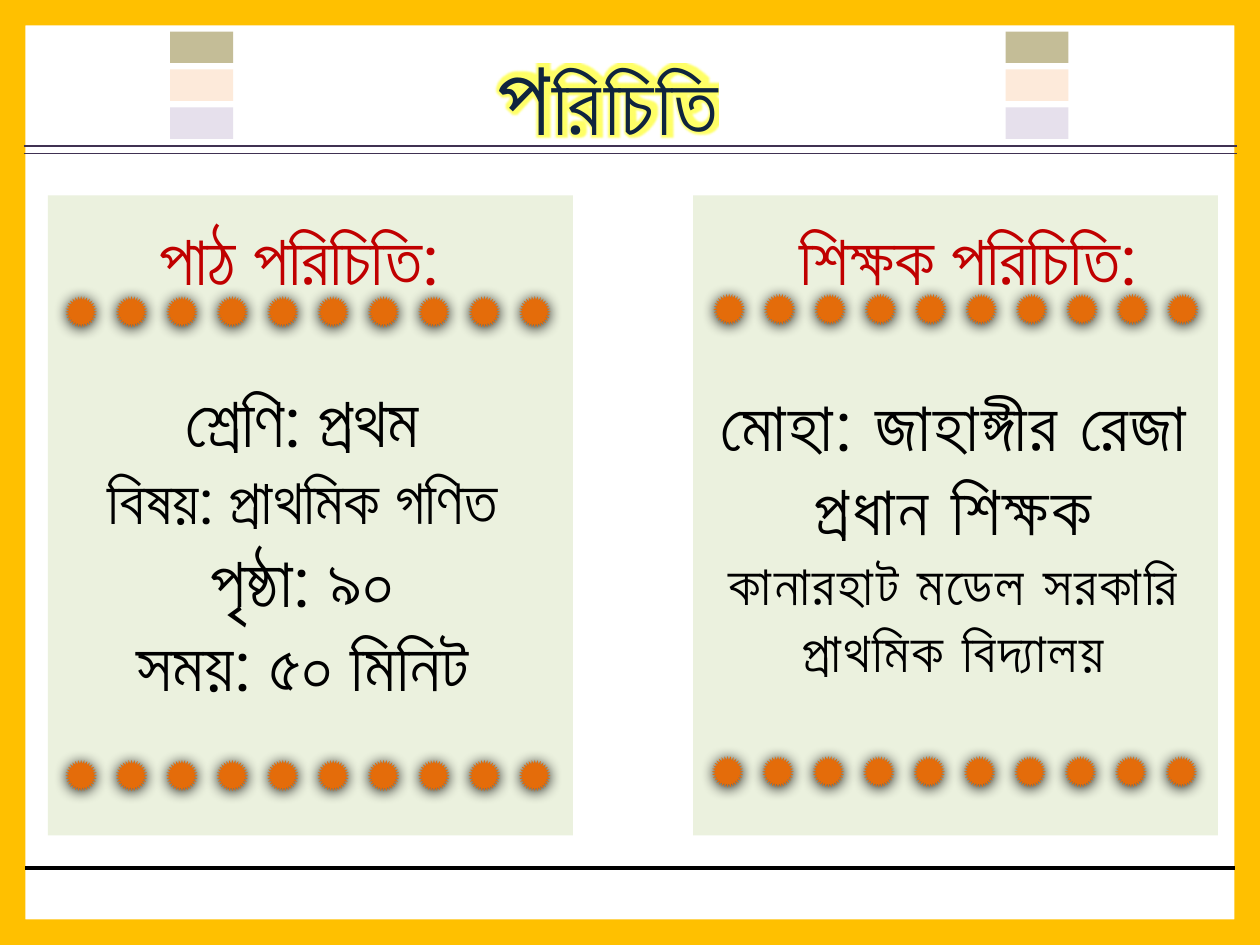
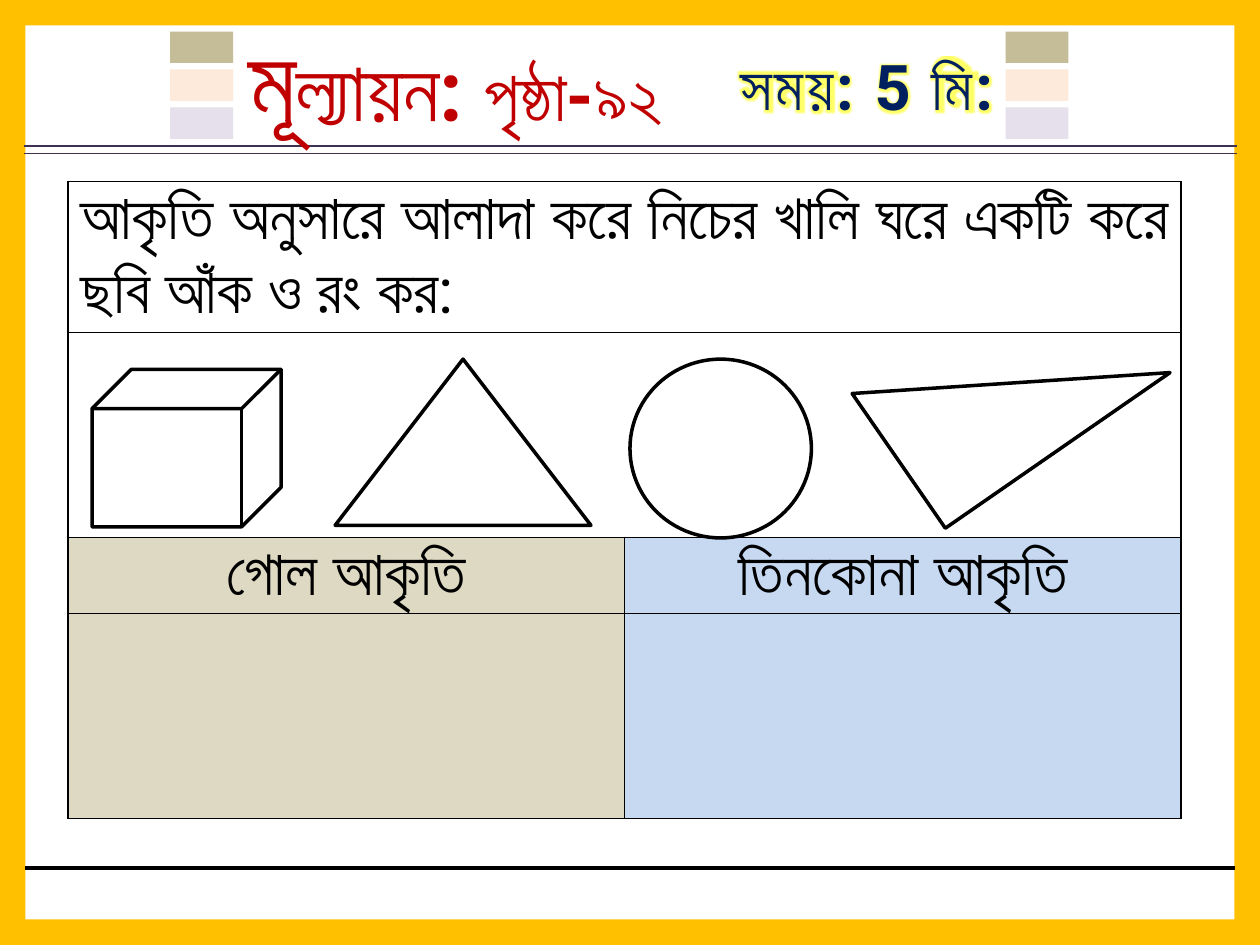
import pptx
import pptx.dml.color
import pptx.enum.shapes
import pptx.enum.text
import pptx.oxml
import pptx.oxml.ns
import pptx.util

RGB = pptx.dml.color.RGBColor
SHAPE = pptx.enum.shapes.MSO_SHAPE
ALIGN = pptx.enum.text.PP_ALIGN
FIT = pptx.enum.text.MSO_AUTO_SIZE

# Colours
GOLD = RGB(0xFF, 0xC0, 0x00)
BLACK = RGB(0x00, 0x00, 0x00)
WHITE = RGB(0xFF, 0xFF, 0xFF)
PLUM = RGB(0x40, 0x31, 0x52)
KHAKI = RGB(0xC4, 0xBD, 0x97)
PEACH = RGB(0xFD, 0xEA, 0xDA)
LILAC = RGB(0xE6, 0xE0, 0xEC)
SAGE = RGB(0xEB, 0xF1, 0xDE)
ORANGE = RGB(0xE4, 0x6C, 0x0A)
RED = RGB(0xC0, 0x00, 0x00)
NAVY = RGB(0x00, 0x20, 0x60)
INK = RGB(0x0F, 0x24, 0x3E)
SAND = RGB(0xDD, 0xD9, 0xC3)
SKY = RGB(0xC6, 0xD9, 0xF1)

FONT = "Roboto"
NS = 'xmlns:a="http://schemas.openxmlformats.org/drawingml/2006/main"'
GLOW = (f'<a:effectLst {NS}><a:glow rad="63500"><a:srgbClr val="FFFF00">'
        '<a:alpha val="60000"/></a:srgbClr></a:glow></a:effectLst>')
SHADE = (f'<a:outerShdw {NS} blurRad="107950" dist="12700" dir="5400000" rotWithShape="0">'
         '<a:srgbClr val="000000"/></a:outerShdw>')
EDGE = (f'<a:ln {NS} w="12700"><a:solidFill><a:srgbClr val="FFFFFF"/></a:solidFill>'
        '<a:prstDash val="sysDot"/></a:ln>')


def xml(text):
    return pptx.oxml.parse_xml(text)


def apply(item, **values):
    for name, value in values.items():
        setattr(item, name, value)


def points(*sizes):
    return [pptx.util.Pt(size) for size in sizes]


class Deck:
    def __init__(self):
        self.prs = pptx.Presentation()
        width, height = points(720, 540)
        apply(self.prs, slide_width=width, slide_height=height)
        self.layout = self.prs.slide_layouts[5]
        self.slide = None

    def page(self):
        self.slide = self.prs.slides.add_slide(self.layout)

    def shape(self, kind, box, fill=None, line=None, turn=0):
        item = self.slide.shapes.add_shape(kind, *points(*box))
        item.shadow.inherit = False
        item.rotation = turn
        if fill is None:
            item.fill.background()
        else:
            item.fill.solid()
            item.fill.fore_color.rgb = fill
        if line is None:
            item.line.fill.background()
        else:
            item.line.color.rgb = line
            item.line.width = pptx.util.Pt(2)
        return item

    def rule(self, left, right, top, color, width):
        kind = pptx.enum.shapes.MSO_CONNECTOR.STRAIGHT
        item = self.slide.shapes.add_connector(kind, *points(left, top, right, top))
        item.line.color.rgb = color
        item.line.width = pptx.util.Pt(width)
        item.element.spPr.append(xml(f"<a:effectLst {NS}/>"))
        return item

    def piece(self, para, text, size, color, bold=False, space=0, glow=False, edge=False):
        part = para.add_run()
        part.text = text
        part.font.color.rgb = color
        props = part.font._element
        if edge:
            props.insert(0, xml(EDGE))
        if glow:
            props.append(xml(GLOW))
        apply(part.font, name=FONT, size=pptx.util.Pt(size), bold=bold)
        props.append(xml(f'<a:cs {NS} typeface="{FONT}"/>'))
        if space:
            props.set("spc", str(round(space * 100)))

    def lines(self, frame, rows, align=ALIGN.CENTER, **style):
        """Each row is a list of (text, size) pieces."""
        for index, row in enumerate(rows):
            para = frame.add_paragraph() if index else frame.paragraphs[0]
            para.alignment = align
            for text, size in row:
                self.piece(para, text, size, **style)

    def text(self, box, rows, **style):
        item = self.slide.shapes.add_textbox(*points(*box))
        apply(item.text_frame, word_wrap=False, auto_size=FIT.SHAPE_TO_FIT_TEXT)
        self.lines(item.text_frame, rows, **style)

    def title(self, box, row, **style):
        item = self.slide.shapes.title
        left, top, width, height = points(*box)
        apply(item, left=left, top=top, width=width, height=height)
        apply(item.text_frame, word_wrap=False, auto_size=FIT.NONE,
              vertical_anchor=pptx.enum.text.MSO_ANCHOR.TOP)
        self.lines(item.text_frame, [row], bold=True, **style)

    def dots(self, left, top):
        for step in range(10):
            dot = self.shape(SHAPE.STAR_32_POINT, (left + 28.8 * step, top, 18, 18), ORANGE)
            dot.element.spPr.find(pptx.oxml.ns.qn("a:effectLst")).append(xml(SHADE))

    def card(self, left, head, body, rows, space=0):
        """Panel with a heading, lines and two dotted rows."""
        self.shape(SHAPE.RECTANGLE, (left, 111.6, 300, 365.8), SAGE)
        self.text(head[0], [[(head[1], 40)]], color=RED)
        self.text(body[0], [[line] for line in body[1]], color=BLACK, space=space)
        for start, top in rows:
            self.dots(start, top)

    def table(self, box, heights, fills):
        grid = self.slide.shapes.add_table(len(heights), 2, *points(*box)).table
        apply(grid, first_row=False, horz_banding=False)
        for row, height in zip(grid.rows, heights):
            row.height = pptx.util.Pt(height)
        for row, colors in enumerate(fills):
            for col, color in enumerate(colors):
                cell = grid.cell(row, col)
                apply(cell, margin_top=0, margin_bottom=0)
                props = cell._tc.get_or_add_tcPr()
                for side in "LRTB":
                    props.append(xml(
                        f'<a:ln{side} {NS} w="12700"><a:solidFill>'
                        f'<a:srgbClr val="{BLACK}"/></a:solidFill></a:ln{side}>'))
                cell.fill.solid()
                cell.fill.fore_color.rgb = color
        return grid

    def base(self):
        """Draw the shared parts and move them into the layout."""
        frame = self.shape(SHAPE.FRAME, (0, 0, 720, 540), GOLD)
        frame.adjustments[0] = 0.027
        parts = [frame, self.rule(14.4, 705.6, 496, BLACK, 2)]
        parts += [self.rule(13.7, 707, top, PLUM, 0.75) for top in (83.5, 87.8)]
        for left in (97.2, 574.6):
            for step, color in enumerate((KHAKI, PEACH, LILAC)):
                box = (left, 18 + 21.7 * step, 36, 18)
                parts.append(self.shape(SHAPE.RECTANGLE, box, color))
        tree = self.layout.shapes.element
        for number, part in enumerate(parts, 20):
            part.element.xpath(".//p:cNvPr")[0].set("id", str(number))
            tree.append(part.element)


def intro(deck):
    deck.title((270, 13.7, 154.8, 80), [("প", 60), ("রিচিতি", 48)],
               color=INK, space=1.5, glow=True)
    # Lesson card
    deck.card(27.4, ((77.8, 119.5, 186.5, 55.4), "পাঠ পরিচিতি:"),
              ((45.4, 212.4, 254.9, 196.6),
               [("শ্রেণি: প্রথম", 40), ("বিষয়: প্রাথমিক গণিত", 36),
                ("পৃষ্ঠা: ৯০", 40), ("সময়: ৫০ মিনিট", 40)]),
              [(37.4, 169.2), (37.4, 434.2)])
    # Teacher card
    deck.card(396, ((442.1, 119.5, 222.5, 55.4), "শিক্ষক পরিচিতি:"),
              ((393.8, 214.6, 301.7, 181.4),
               [("মোহা: জাহাঙ্গীর রেজা", 40), ("প্রধান শিক্ষক", 40),
                ("কানারহাট মডেল সরকারি", 32), ("প্রাথমিক বিদ্যালয়", 32)]),
              [(407.7, 167.8), (406.8, 432)], space=1.5)


def task(deck):
    deck.title((133.2, 5.8, 254.9, 80),
               [("মূ", 60), ("ল্যায়ন: ", 48), ("পৃষ্ঠা-৯২", 40)], color=RED, edge=True)
    deck.text((414, 23.8, 162.7, 51), [[("সময়: 5 মি:", 36)]],
              color=NAVY, bold=True, space=1.5, glow=True)
    # Answer table
    pair = (SAND, SKY)
    grid = deck.table((38.9, 103.7, 636, 362.5), (85, 117, 43.5, 117),
                      [(WHITE, WHITE), (WHITE, WHITE), pair, pair])
    for row in (0, 1):
        grid.cell(row, 0).merge(grid.cell(row, 1))
    cells = [(0, 0, "আকৃতি অনুসারে আলাদা করে নিচের খালি ঘরে একটি করে ছবি আঁক ও রং কর:",
              ALIGN.JUSTIFY),
             (2, 0, "গোল আকৃতি", ALIGN.CENTER),
             (2, 1, "তিনকোনা আকৃতি", ALIGN.CENTER)]
    for row, col, text, align in cells:
        deck.lines(grid.cell(row, col).text_frame, [[(text, 36)]], align, color=BLACK)
    # Figures to sort
    for kind, box, turn in (
            (SHAPE.CUBE, (52.6, 211, 108, 90), 0),
            (SHAPE.OVAL, (360, 205.2, 103.7, 102.2), 0),
            (SHAPE.ISOSCELES_TRIANGLE, (191.5, 205.2, 146.2, 95), 0),
            (SHAPE.RIGHT_TRIANGLE, (499.7, 172.1, 156.2, 93.6), 325.3)):
        deck.shape(kind, box, line=BLACK, turn=turn)


def main():
    deck = Deck()
    deck.page()
    deck.base()
    intro(deck)
    deck.page()
    task(deck)
    deck.prs.save("out.pptx")


if __name__ == "__main__":
    main()
